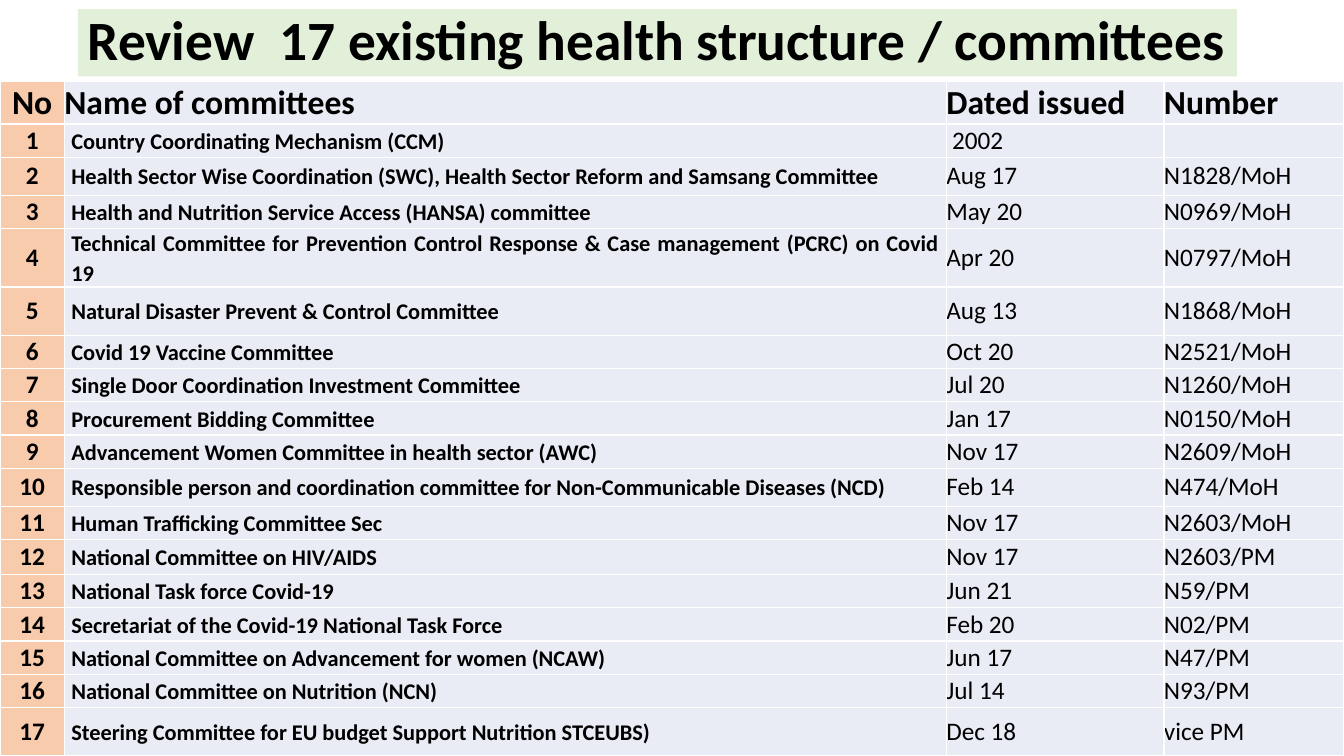
from lxml import etree
from pptx import Presentation
from pptx.dml.color import RGBColor
from pptx.enum import shapes, text
from pptx.oxml import ns
from pptx.util import Pt

FONT = "Calibri"
BLACK, WHITE = "000000", "FFFFFF"
GREEN, PEACH, PALE_BLUE = "E2F0D9", "F8CBAD", "E9EBF5"
LEFT, CENTER, JUSTIFY = (text.PP_ALIGN.LEFT, text.PP_ALIGN.CENTER,
                         text.PP_ALIGN.JUSTIFY)

HEADINGS = ("No", "Name of committees", "Dated issued", "Number")
COMMITTEES = [
    ("Country Coordinating Mechanism (CCM)", " 2002", ""),
    ("Health Sector Wise Coordination (SWC), Health Sector Reform and Samsang Committee",
     "Aug 17", "N1828/MoH"),
    ("Health and Nutrition Service Access (HANSA) committee", "May 20", "N0969/MoH"),
    ("Technical Committee for Prevention Control Response & Case management (PCRC) on Covid 19",
     "Apr 20", "N0797/MoH"),
    ("Natural Disaster Prevent & Control Committee", "Aug 13", "N1868/MoH"),
    ("Covid 19 Vaccine Committee", "Oct 20", "N2521/MoH"),
    ("Single Door Coordination Investment Committee", "Jul 20", "N1260/MoH"),
    ("Procurement Bidding Committee", "Jan 17", "N0150/MoH"),
    ("Advancement Women Committee in health sector (AWC)", "Nov 17", "N2609/MoH"),
    ("Responsible person and coordination committee for Non-Communicable Diseases (NCD)",
     "Feb 14", "N474/MoH"),
    ("Human Trafficking Committee Sec", "Nov 17", "N2603/MoH"),
    ("National Committee on HIV/AIDS", "Nov 17", "N2603/PM"),
    ("National Task force Covid-19", "Jun 21", "N59/PM"),
    ("Secretariat of the Covid-19 National Task Force", "Feb 20", "N02/PM"),
    ("National Committee on Advancement for women (NCAW)", "Jun 17", "N47/PM"),
    ("National Committee on Nutrition (NCN)", "Jul 14", "N93/PM"),
    ("Steering Committee for EU budget Support Nutrition STCEUBS)", "Dec 18", "vice PM"),
]
COLUMN_WIDTHS = (46, 630, 155.4, 128.6)
ROW_HEIGHT = 23.7
TALL_ROWS = {0: 30.2, 2: 27.2, 4: 41.8, 5: 34.6, 10: 27.2, 12: 25.2, 17: 34.6}


def rgb(color):
    return RGBColor.from_string(color)


def fill(target, color):
    target.fill.solid()
    target.fill.fore_color.rgb = rgb(color)


def format_text(tf, size, bold, align=LEFT, spacing=1.0):
    for p in tf.paragraphs:
        p.alignment = align
        p.line_spacing = spacing
        for r in p.runs:
            r.font.name = FONT
            r.font.size = Pt(size)
            r.font.bold = bold
            r.font.color.rgb = rgb(BLACK)


def add_title(s, wording):
    sp = s.shapes.add_shape(shapes.MSO_SHAPE.RECTANGLE,
                            Pt(55.6), Pt(6.5), Pt(828), Pt(48.2))
    sp.shadow.inherit = False
    sp.line.fill.background()
    fill(sp, GREEN)
    tf = sp.text_frame
    tf.word_wrap = True
    tf.vertical_anchor = text.MSO_ANCHOR.MIDDLE
    tf.text = wording
    format_text(tf, 39.6, True, spacing=0.9)


def add_borders(cell, color, width):
    """Draw the four edges; they must come before the fill in the cell's XML."""
    tc_pr = cell._tc.get_or_add_tcPr()
    for i, edge in enumerate(("lnL", "lnR", "lnT", "lnB")):
        ln = etree.Element(ns.qn(f"a:{edge}"), w=str(Pt(width)))
        solid = etree.SubElement(ln, ns.qn("a:solidFill"))
        etree.SubElement(solid, ns.qn("a:srgbClr"), val=color)
        tc_pr.insert(i, ln)


def fill_cell(cell, wording, color, size, bold, align=LEFT, spacing=1.0, inset=0):
    cell.text = wording
    cell.vertical_anchor = text.MSO_ANCHOR.MIDDLE
    cell.margin_left = cell.margin_right = Pt(inset)
    cell.margin_top = cell.margin_bottom = Pt(0)
    format_text(cell.text_frame, size, bold, align, spacing)
    fill(cell, color)
    add_borders(cell, WHITE, 1)


def add_committee_table(s):
    rows = [HEADINGS] + [(str(n), *c) for n, c in enumerate(COMMITTEES, 1)]
    heights = [TALL_ROWS.get(i, ROW_HEIGHT) for i in range(len(rows))]
    table = s.shapes.add_table(len(rows), len(HEADINGS), Pt(0), Pt(58.4),
                               Pt(sum(COLUMN_WIDTHS)), Pt(sum(heights))).table
    table.first_row = table.horz_banding = False
    for column, width in zip(table.columns, COLUMN_WIDTHS):
        column.width = Pt(width)
    for i, (row, height) in enumerate(zip(rows, heights)):
        table.rows[i].height = Pt(height)
        size = 18 if i else 24
        number, name, *details = [table.cell(i, j) for j in range(len(row))]
        fill_cell(number, row[0], PEACH, size, True, CENTER)
        if i:
            fill_cell(name, row[1], PALE_BLUE, 16, True, JUSTIFY, 1.07, 5)
        else:
            fill_cell(name, row[1], PALE_BLUE, size, True)
        for cell, wording in zip(details, row[2:]):
            fill_cell(cell, wording, PALE_BLUE, size, i == 0)


def main():
    prs = Presentation()
    prs.slide_width, prs.slide_height = Pt(960), Pt(540)
    s = prs.slides.add_slide(prs.slide_layouts[6])
    add_title(s, "Review  17 existing health structure / committees")
    add_committee_table(s)
    prs.save("out.pptx")


if __name__ == "__main__":
    main()
